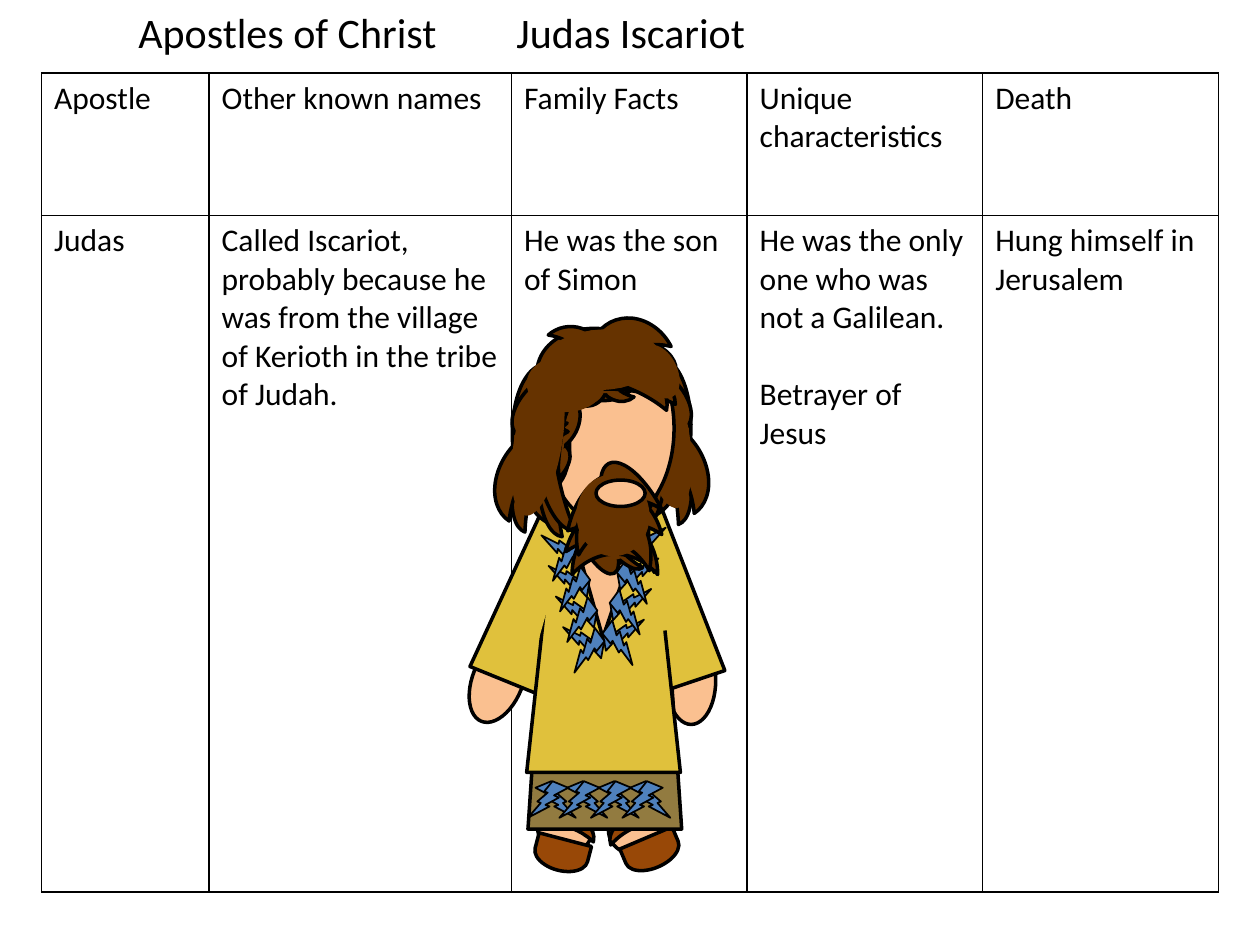
from lxml import etree
from pptx import Presentation
from pptx.dml.color import RGBColor
from pptx.enum.shapes import MSO_SHAPE as G
from pptx.oxml.ns import qn
from pptx.util import Inches, Pt

BLACK = RGBColor(0x00, 0x00, 0x00)
SKIN = RGBColor(0xFA, 0xC0, 0x90)
LEATHER = RGBColor(0x98, 0x48, 0x07)
HAIR = RGBColor(0x66, 0x33, 0x00)
TUNIC = RGBColor(0xE0, 0xC1, 0x3C)
SKIRT = RGBColor(0x92, 0x7B, 0x40)
BLUE = RGBColor(0x4F, 0x81, 0xBD)

prs = Presentation()
prs.slide_width, prs.slide_height = Inches(10), Inches(7.5)
s = prs.slides.add_slide(prs.slide_layouts[6])


def style(p, size):
    for r in p.runs:
        r.font.size = Pt(size)
        r.font.name = "Calibri"
        r.font.color.rgb = BLACK


def draw(kind, x, y, w, h, rot, fill, line=2, adj=None, flip=False):
    sp = figure.shapes.add_shape(kind, Inches(x), Inches(y), Inches(w), Inches(h))
    sp.rotation = rot % 360
    sp.shadow.inherit = False
    sp.fill.solid()
    sp.fill.fore_color.rgb = fill
    if line:
        sp.line.color.rgb = BLACK
        sp.line.width = Pt(line)
    else:
        sp.line.fill.background()
    if adj:
        sp.adjustments[0] = adj
    if flip:
        sp._element.spPr.find(qn("a:xfrm")).set("flipH", "1")


rows = [
    ["Apostle", "Other known names", "Family Facts", "Unique characteristics", "Death"],
    [
        "Judas",
        "Called Iscariot, probably because he was from the village of Kerioth in the tribe of Judah.",
        "He was the son of Simon",
        "He was the only one who was not a Galilean.\nBetrayer of Jesus",
        "Hung himself in Jerusalem",
    ],
]
table = s.shapes.add_table(2, 5, Inches(0.33), Inches(0.58), Inches(9.33), Inches(6.5)).table
table.first_row = table.horz_banding = False
for col, w in zip(table.columns, [1.33, 2.4, 1.87, 1.87, 1.87]):
    col.width = Inches(w)
for row, h, texts in zip(table.rows, [1.13, 5.37], rows):
    row.height = Inches(h)
    for cell, t in zip(row.cells, texts):
        cell.text_frame.text = t
        for i, p in enumerate(cell.text_frame.paragraphs):
            style(p, 18)
            if i:
                p.space_before = Pt(22)
        tcPr = cell._tc.get_or_add_tcPr()
        for side in ("a:lnL", "a:lnR", "a:lnT", "a:lnB"):
            ln = etree.SubElement(tcPr, qn(side), w=str(Pt(1)))
            solid = etree.SubElement(ln, qn("a:solidFill"))
            etree.SubElement(solid, qn("a:srgbClr"), val=str(BLACK))
        cell.fill.background()

title = s.shapes.add_textbox(Inches(1), Inches(0), Inches(7.25), Inches(0.5))
tf = title.text_frame
tf.word_wrap = True
tf.text = "Apostles of Christ\t\tJudas Iscariot"
style(tf.paragraphs[0], 24)

figure = s.shapes.add_group_shape()

body = [
    (G.OVAL, 4.28, 6.35, 0.41, 0.44, 103.9, SKIN),
    (G.FLOWCHART_DELAY, 4.33, 6.57, 0.25, 0.43, 104.6, LEATHER),
    (G.MOON, 4.42, 6.3, 0.16, 0.48, 105.8, LEATHER, 2, 0.63),
    (G.OVAL, 3.75, 5.05, 0.4, 0.7, 21.7, SKIN),
    (G.OVAL, 5.29, 5.05, 0.39, 0.7, 0, SKIN),
    (G.OVAL, 4.85, 6.34, 0.41, 0.46, 66.3, SKIN),
    (G.FLOWCHART_DELAY, 5.05, 6.54, 0.25, 0.45, 67, LEATHER),
    (G.MOON, 4.97, 6.29, 0.16, 0.5, 68.2, LEATHER, 2, 0.63),
    (G.TRAPEZOID, 4.19, 4.34, 1.22, 2.24, 0, SKIRT, 2, 0.125),
    (G.TRAPEZOID, 4.97, 3.96, 0.56, 1.49, 341.4, TUNIC, 2, 0.125),
    (G.TRAPEZOID, 3.99, 3.96, 0.56, 1.49, 22.1, TUNIC, 2, 0.125),
    (G.TRAPEZOID, 4.18, 3.89, 1.22, 2.24, 0, TUNIC, 2, 0.2),
    (G.ISOSCELES_TRIANGLE, 4.46, 3.91, 0.72, 1.15, 180, SKIN, 2, 0.55),
    (G.RECTANGLE, 5.14, 3.91, 0.11, 1.1, 350.4, TUNIC, 0),
    (G.RECTANGLE, 4.17, 3.91, 0.22, 1.5, 15.9, TUNIC, 0),
]
for part in body:
    draw(*part)

for i in range(4):
    for x, flip in [(4.25, False), (4.19, True)]:
        draw(G.LIGHTNING_BOLT, x + 0.25 * i, 6.2, 0.32, 0.29, 0, BLUE, 1, flip=flip)

collar = []
for i in range(4):
    x, y = 4.78 + 0.057 * i, 4.89 - 0.243 * i
    collar += [(x, y, False), (x - 0.02, y + 0.06, True)]
for x, y, flip in collar:
    draw(G.LIGHTNING_BOLT, x, y, 0.31, 0.29, 283.2, BLUE, 1, flip=flip)
for x, y, flip in collar:
    draw(G.LIGHTNING_BOLT, 9.27 - x, y + 0.06, 0.31, 0.29, 76.8, BLUE, 1, flip=not flip)

side_hair = [
    (5.03, 3.05, 0.2, 0.77, 4.8, 0.8),
    (5.17, 3.01, 0.17, 0.82, 353.6, 0.63),
    (5.14, 3.02, 0.17, 0.82, 6.4, 0.63),
    (5.08, 3.02, 0.17, 0.82, 339.8, 0.63),
    (5.02, 3.43, 0.22, 0.27, 42, 0.63),
    (4.98, 3.09, 0.2, 0.51, 326.6, 0.67),
    (5.08, 3.25, 0.22, 0.54, 170.4, None),
    (5.17, 2.84, 0.31, 1.28, 184.8, 0.8),
    (5.01, 2.82, 0.26, 1.37, 173.6, 0.63),
    (5.06, 2.8, 0.26, 1.37, 186.4, 0.63),
    (5.14, 2.79, 0.26, 1.37, 159.8, 0.63),
    (5.14, 3.06, 0.36, 0.41, 222, 0.63),
    (5.25, 3.21, 0.31, 0.85, 146.6, 0.67),
    (5.09, 2.87, 0.38, 1.17, 350.4, None),
]
top_hair = [
    (4.62, 2.74, 0.26, 0.61, 281.2, 0.8),
    (4.64, 2.56, 0.22, 0.65, 270, 0.63),
    (4.65, 2.61, 0.22, 0.65, 282.8, 0.63),
    (4.65, 2.67, 0.22, 0.65, 256.2, 0.63),
    (4.77, 2.88, 0.16, 0.37, 318.4, 0.63),
    (4.54, 2.89, 0.26, 0.4, 243, 0.67),
    (4.69, 2.77, 0.27, 0.43, 86.8, None),
    (4.61, 2.3, 0.39, 1.02, 101.2, 0.8),
    (4.65, 2.5, 0.33, 1.09, 90, 0.63),
    (4.63, 2.43, 0.33, 1.09, 102.8, 0.63),
    (4.63, 2.33, 0.33, 1.09, 76.2, 0.63),
    (4.5, 2.5, 0.27, 0.55, 138.4, 0.63),
    (4.74, 2.39, 0.39, 0.68, 63, 0.67),
    (4.54, 2.39, 0.48, 0.93, 266.8, None),
]
beard = [
    (4.67, 4.14, 0.35, 0.38, 281.2, 0.8),
    (4.69, 3.92, 0.29, 0.41, 270, 0.63),
    (4.7, 3.98, 0.29, 0.41, 282.8, 0.63),
    (4.7, 4.07, 0.29, 0.41, 256.2, 0.63),
    (4.85, 4.11, 0.1, 0.49, 318.4, 0.63),
    (4.62, 4.27, 0.35, 0.25, 243, 0.67),
    (4.7, 4.12, 0.37, 0.27, 86.8, None),
    (4.61, 3.7, 0.52, 0.64, 101.2, 0.8),
    (4.66, 4, 0.44, 0.68, 90, 0.63),
    (4.65, 3.9, 0.44, 0.68, 102.8, 0.63),
    (4.65, 3.77, 0.44, 0.68, 76.2, 0.63),
    (4.69, 3.7, 0.52, 0.42, 63, 0.67),
    (4.54, 3.8, 0.65, 0.58, 266.8, None),
    (4.18, 2.82, 0.62, 0.45, 0, None),
    (5.01, 2.81, 0.45, 0.28, 64.6, None),
]
left_hair = [(9.55 - x - w, y + 0.06, w, h, 360 - rot, adj) for x, y, w, h, rot, adj in side_hair]

for locks in (side_hair, top_hair, left_hair, beard):
    if locks is top_hair:
        draw(G.OVAL, 4.32, 2.63, 1.03, 1.54, 0, SKIN)
    for x, y, w, h, rot, adj in locks:
        kind, line = (G.MOON, 2) if adj else (G.OVAL, 0)
        draw(kind, x, y, w, h, rot, HAIR, line, adj, locks is left_hair)
draw(G.OVAL, 4.73, 3.81, 0.39, 0.21, 0, SKIN)

prs.save("out.pptx")
